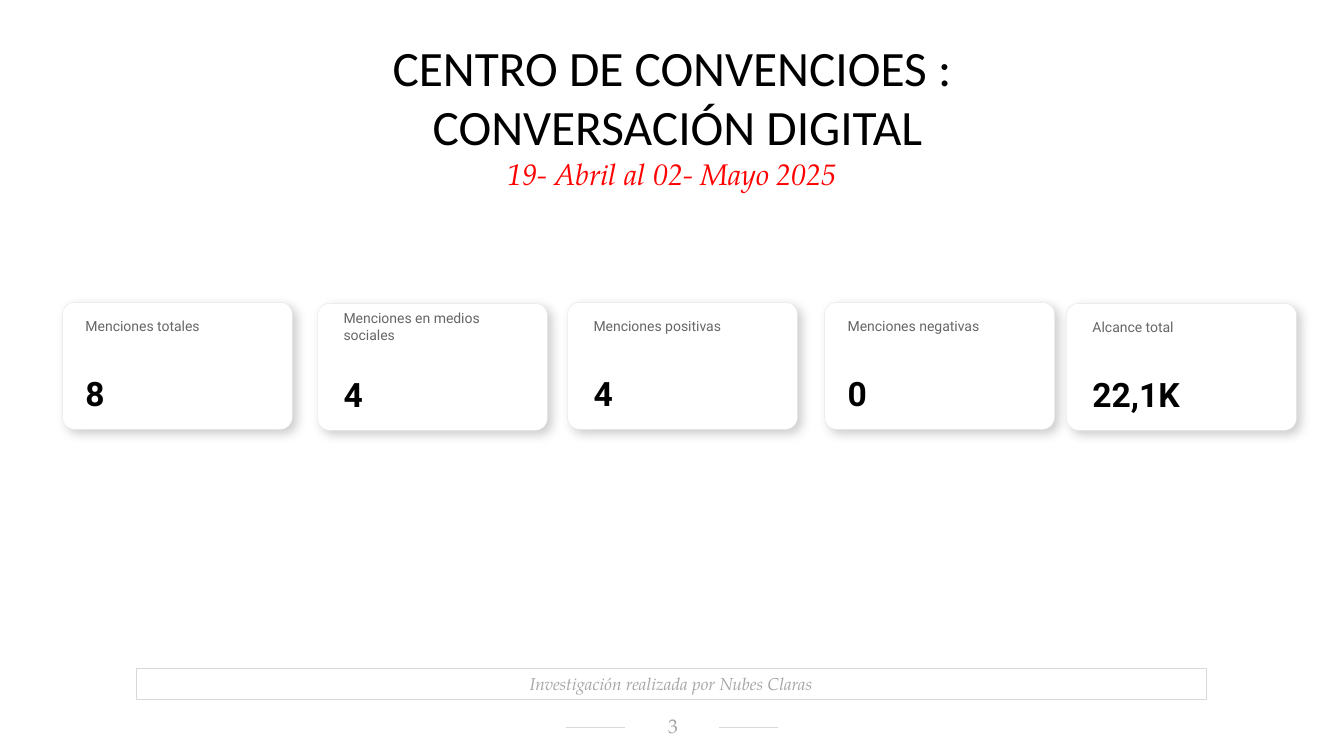
from dataclasses import dataclass

from lxml import etree
from pptx import Presentation
from pptx import util as u
from pptx.dml.color import RGBColor
from pptx.enum import shapes, text
from pptx.oxml import ns


@dataclass(frozen=True)
class Theme:
    heading: str = "Calibri"
    serif: str = "TeX Gyre Pagella"
    sans: str = "Roboto"
    black: str = "000000"
    red: str = "FF0000"
    label_gray: str = "666666"
    footer_gray: str = "A6A6A6"
    rule: str = "D9D9D9"
    card_edge: str = "E6E6E6"
    white: str = "FFFFFF"
    title_size: float = 35.3
    date_size: float = 21.2
    label_size: float = 10
    value_size: float = 24
    credit_size: float = 12.3
    page_size: float = 14.1


theme = Theme()
CENTER = text.PP_ALIGN.CENTER
LEFT = text.PP_ALIGN.LEFT
TOP = text.MSO_ANCHOR.TOP
MIDDLE = text.MSO_ANCHOR.MIDDLE


def write(holder, lines, align=LEFT, anchor=MIDDLE):
    """Fill a shape with lines of (words, font, size, color, bold, italic)."""
    frame = holder.text_frame
    frame.word_wrap = True
    frame.vertical_anchor = anchor
    for i, (words, font, size, color, bold, italic) in enumerate(lines):
        paragraph = frame.add_paragraph() if i else frame.paragraphs[0]
        paragraph.alignment = align
        run = paragraph.add_run()
        run.text = words
        run.font.name = font
        run.font.size = u.Pt(size)
        run.font.color.rgb = RGBColor.from_string(color)
        run.font.bold = bold
        run.font.italic = italic


def box(left, top, width, height):
    return slide.shapes.add_textbox(u.Pt(left), u.Pt(top), u.Pt(width), u.Pt(height))


deck = Presentation()
deck.slide_width, deck.slide_height = u.Pt(960), u.Pt(540)
slide = deck.slides.add_slide(deck.slide_layouts[6])

# Heading and dates
heading = box(0, 23, 960, 119)
write(heading, [
    ("CENTRO DE CONVENCIOES :", theme.heading, theme.title_size, theme.black, False, False),
    (" CONVERSACIÓN DIGITAL", theme.heading, theme.title_size, theme.black, False, False),
    ("19- Abril al 02- Mayo 2025", theme.serif, theme.date_size, theme.red, False, True),
], CENTER, TOP)

# Metric cards: left, top, text indent, label, value
metrics = [
    (44.6, 216, 9.4, "Menciones totales", "8"),
    (226.8, 216.7, 11.5, "Menciones en medios sociales", "4"),
    (405.4, 216, 11.5, "Menciones positivas", "4"),
    (589, 216, 9.4, "Menciones negativas", "0"),
    (761.8, 216.7, 11.5, "Alcance total", "22,1K"),
]
for left, top, indent, label, value in metrics:
    card = slide.shapes.add_shape(shapes.MSO_SHAPE.ROUNDED_RECTANGLE,
                                  u.Pt(left), u.Pt(top), u.Pt(164.2), u.Pt(90.7))
    card.adjustments[0] = 0.095
    card.fill.solid()
    card.fill.fore_color.rgb = RGBColor.from_string(theme.white)
    card.line.color.rgb = RGBColor.from_string(theme.card_edge)
    card.line.width = u.Pt(0.25)

    # Soft shadow to the lower right
    card.shadow.inherit = False
    effects = card._element.spPr.find(ns.qn("a:effectLst"))
    shadow = etree.SubElement(effects, ns.qn("a:outerShdw"), blurRad=str(u.Pt(8)),
                              dist=str(u.Pt(4)), dir=str(45 * 60000),
                              algn="tl", rotWithShape="0")
    tint = etree.SubElement(shadow, ns.qn("a:srgbClr"), val=theme.black)
    etree.SubElement(tint, ns.qn("a:alpha"), val="20000")

    write(box(left + indent, top + 8, 141.8, 17.3),
          [(label, theme.sans, theme.label_size, theme.label_gray, False, False)])
    write(box(left + indent, top + 50.5, 98.6, 28.1),
          [(value, theme.sans, theme.value_size, theme.black, True, False)])

# Credit bar
credit = slide.shapes.add_shape(shapes.MSO_SHAPE.RECTANGLE,
                                u.Pt(97.2), u.Pt(477.4), u.Pt(764.6), u.Pt(22.3))
credit.shadow.inherit = False
credit.fill.background()
credit.line.color.rgb = RGBColor.from_string(theme.rule)
credit.line.width = u.Pt(0.75)
write(credit, [("Investigación realizada por Nubes Claras", theme.serif,
                theme.credit_size, theme.footer_gray, False, True)], CENTER, TOP)

# Page number between two rules
page_number = box(446.4, 511.2, 67.2, 16.6)
frame = page_number.text_frame
frame.margin_left, frame.margin_right = u.Pt(8.6), u.Pt(7.2)
frame.margin_top, frame.margin_bottom = u.Pt(1.4), u.Pt(3.6)
write(page_number, [("3", theme.serif, theme.page_size, theme.footer_gray, False, False)], CENTER)

for outer, inner, side in ((404.4, 446.4, 1), (555.6, 513.6, 3)):
    rule = slide.shapes.add_connector(shapes.MSO_CONNECTOR.STRAIGHT,
                                      u.Pt(outer), u.Pt(519.5), u.Pt(inner), u.Pt(519.5))
    rule.end_connect(page_number, side)
    rule.line.color.rgb = RGBColor.from_string(theme.rule)
    rule.line.width = u.Pt(0.5)
    etree.SubElement(rule._element.spPr, ns.qn("a:effectLst"))

deck.save("out.pptx")
